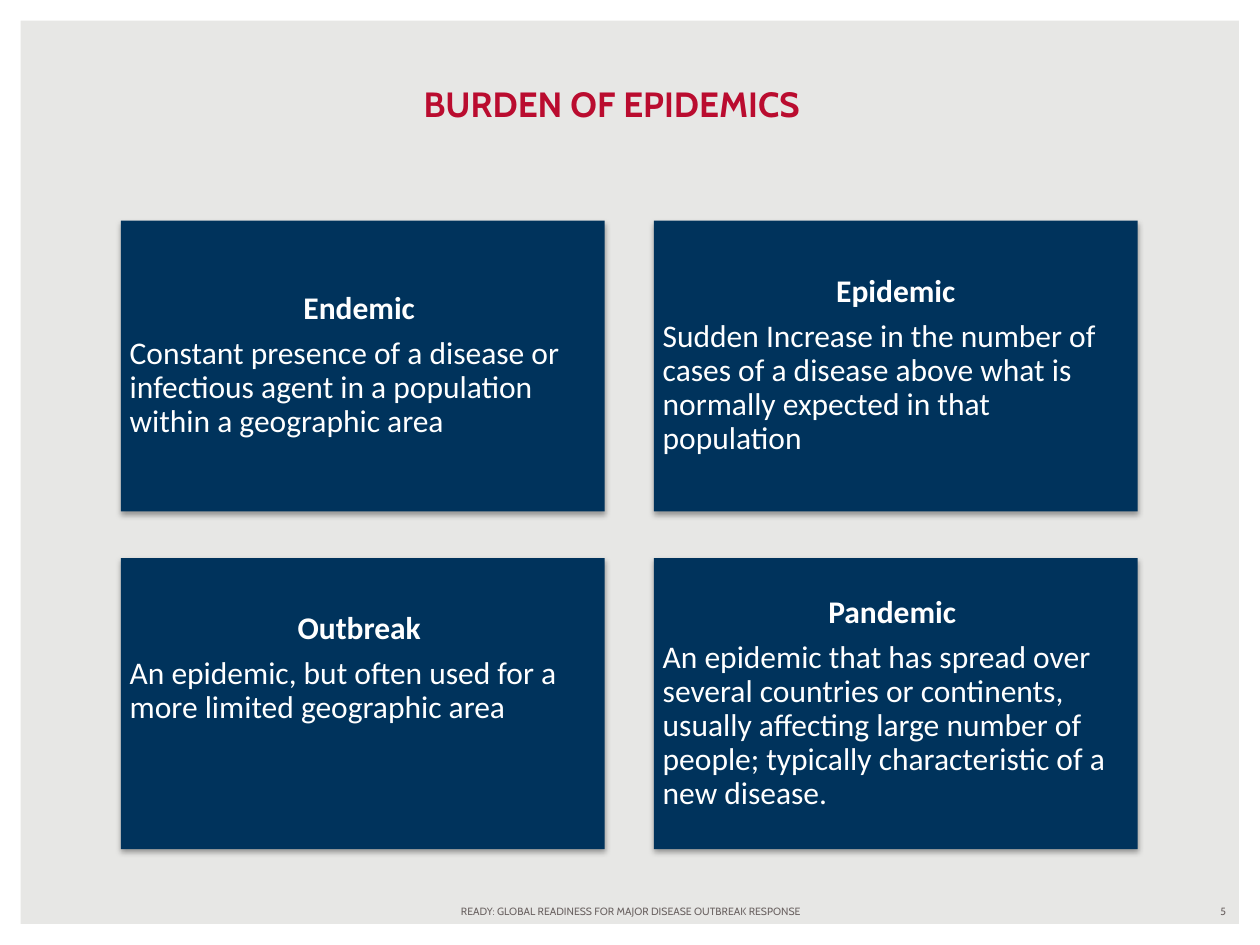
from lxml import etree
from pptx import Presentation
from pptx.dml.color import RGBColor
from pptx.enum.shapes import MSO_SHAPE
from pptx.enum.text import MSO_ANCHOR, PP_ALIGN
from pptx.util import Inches, Pt

FRAME, RECT = MSO_SHAPE.FRAME, MSO_SHAPE.RECTANGLE
TOP, MIDDLE, BOTTOM = MSO_ANCHOR.TOP, MSO_ANCHOR.MIDDLE, MSO_ANCHOR.BOTTOM
LEFT, CENTER, RIGHT = PP_ALIGN.LEFT, PP_ALIGN.CENTER, PP_ALIGN.RIGHT

WIDE, HIGH = 10, 7.5
CARD_W, CARD_H, GAP = 3.84, 2.31, 0.38
EDGE_X, EDGE_Y = 0.96, 1.75
STEP_X, STEP_Y = CARD_W + GAP + 0.01, CARD_H + GAP - 0.01
INSET = 0.07

SHADOW = """<a:outerShdw xmlns:a="http://schemas.openxmlformats.org/drawingml/2006/main"
 blurRad="40000" dist="23000" dir="5400000" rotWithShape="0">
 <a:srgbClr val="000000"><a:alpha val="35000"/></a:srgbClr></a:outerShdw>"""


def color(code):
    return RGBColor.from_string(code)


def write(para, text, align, font, size, code, bold=False):
    """Fill a paragraph with one formatted run."""
    para.alignment = align
    run = para.add_run()
    run.text = text
    look = {"name": font, "size": Pt(size), "bold": bold}
    for key, value in look.items():
        setattr(run.font, key, value)
    run.font.color.rgb = color(code)


deck = Presentation()
deck.slide_width, deck.slide_height = Inches(WIDE), Inches(HIGH)
slide = deck.slides.add_slide(deck.slide_layouts[6])
slide.background.fill.solid()
slide.background.fill.fore_color.rgb = color("E7E7E5")

# White border around the slide
frame = slide.shapes.add_shape(FRAME, 0, 0, Inches(WIDE), Inches(HIGH))
frame.adjustments[0] = 0.022
frame.shadow.inherit = False
frame.fill.solid()
frame.fill.fore_color.rgb = color("FFFFFF")
frame.line.fill.background()

# Two by two grid of definitions: term, meaning, anchor, top inset
cards = [
    ("Endemic\u00a0", "Constant presence of a disease or infectious agent in a "
     "population within a geographic area", MIDDLE, INSET),
    ("Epidemic", "Sudden Increase in the number of cases of a disease above what "
     "is normally expected in that population", MIDDLE, INSET),
    ("Outbreak ", "An epidemic, but often used for a more limited geographic area",
     TOP, 0.43),
    ("Pandemic ", "An epidemic that has spread over several countries or continents, "
     "usually affecting large number of people; typically characteristic of a "
     "new disease.", MIDDLE, INSET),
]
for i, (term, meaning, anchor, top) in enumerate(cards):
    row, col = divmod(i, 2)
    card = slide.shapes.add_shape(
        RECT, Inches(EDGE_X + col * STEP_X), Inches(EDGE_Y + row * STEP_Y),
        Inches(CARD_W), Inches(CARD_H))
    card.fill.solid()
    card.fill.fore_color.rgb = color("00335C")
    card.line.fill.background()
    card.shadow.inherit = False
    card._element.spPr.find("{*}effectLst").append(etree.fromstring(SHADOW))
    body = card.text_frame
    layout = {"word_wrap": True, "vertical_anchor": anchor,
              "margin_left": Inches(INSET), "margin_right": Inches(INSET),
              "margin_top": Inches(top), "margin_bottom": Inches(INSET)}
    for key, value in layout.items():
        setattr(body, key, value)
    write(body.paragraphs[0], term, CENTER, "Calibri", 18, "FFFFFF", True)
    write(body.add_paragraph(), meaning, LEFT, "Calibri", 18, "FFFFFF")
    for para in body.paragraphs:
        para.line_spacing = 0.9
        para.space_after = Pt(6.5)

# Title, footer and page number
labels = [
    ("BURDEN OF EPIDEMICS", (0.33, 0.6, 9.05, 0.44), BOTTOM, CENTER, 20, "BA0C2F", True),
    ("READY: GLOBAL READINESS FOR MAJOR DISEASE OUTBREAK RESPONSE",
     (3.42, 7.13, 3.17, 0.2), MIDDLE, CENTER, 6, "6C6463", False),
    ("5", (7.5, 7.13, 2.33, 0.2), MIDDLE, RIGHT, 6, "6C6463", False),
]
for text, place, anchor, align, size, code, bold in labels:
    label = slide.shapes.add_textbox(*map(Inches, place)).text_frame
    label.word_wrap = True
    label.vertical_anchor = anchor
    write(label.paragraphs[0], text, align, "Cabin", size, code, bold)

deck.save("out.pptx")
